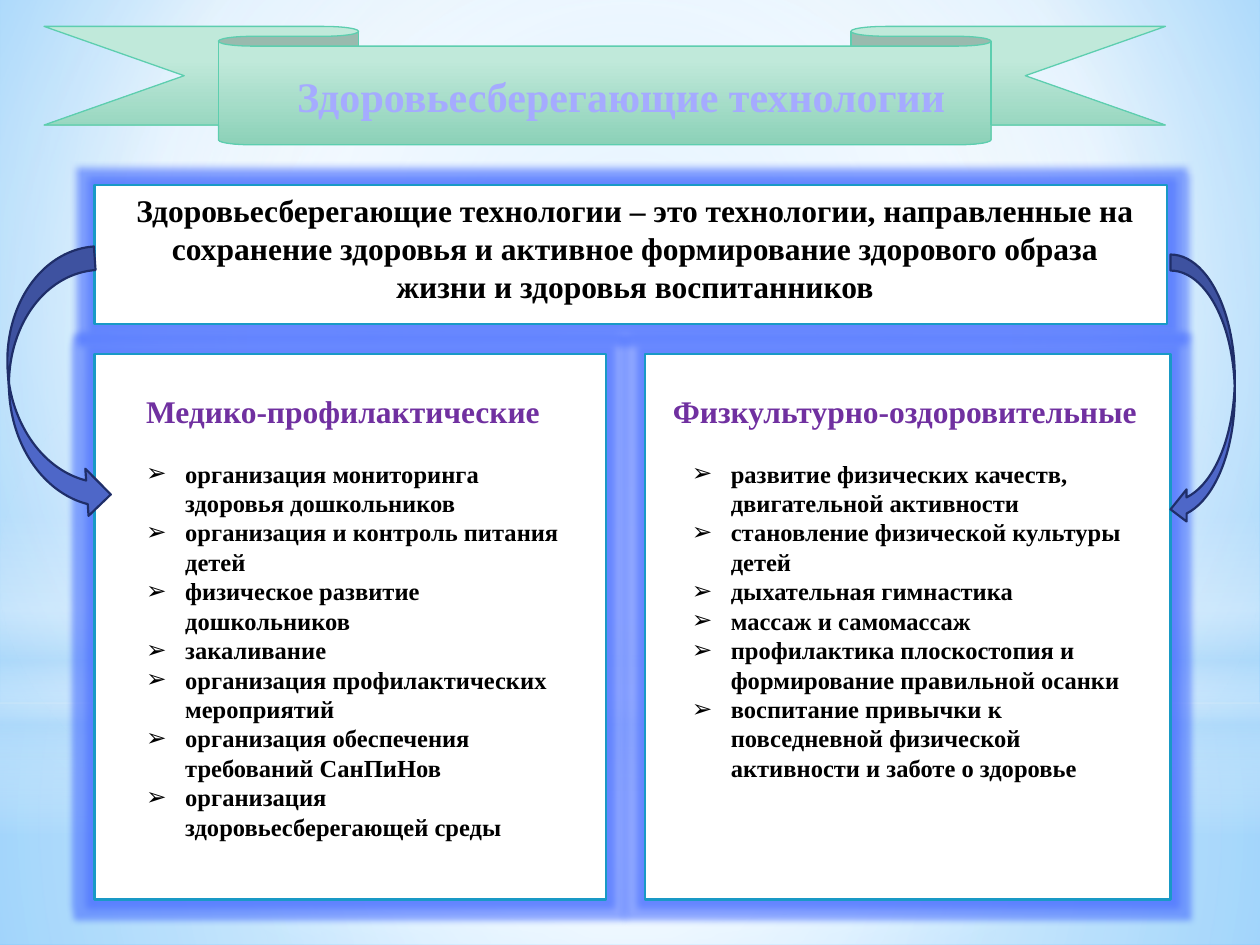
"""Build a slide on health-preserving technologies in preschool education."""
from dataclasses import dataclass
from typing import Optional

from lxml.etree import SubElement
from pptx import Presentation
from pptx.dml.color import RGBColor
from pptx.enum.shapes import MSO_SHAPE
from pptx.enum.text import MSO_ANCHOR, MSO_AUTO_SIZE, PP_ALIGN
from pptx.oxml.ns import qn
from pptx.util import Inches, Pt

FONT = "Times New Roman"
WHITE, PALE, BLACK, PURPLE = "FFFFFF", "B4DCFA", "000000", "7030A0"
CENTRE = (50, 50, 50, 50)


@dataclass(frozen=True)
class Gradient:
    stops: tuple
    focus: Optional[tuple] = None


@dataclass(frozen=True)
class Figure:
    kind: MSO_SHAPE
    area: tuple
    fill: object
    line: Optional[str] = None
    width: float = 1.25
    rotation: float = 0
    adjustments: tuple = ()
    glow: bool = False


@dataclass(frozen=True)
class Column:
    heading: str
    heading_area: tuple
    items: tuple
    items_area: tuple


BACKDROP = Gradient(((0, "9ED5FF", 100), (60, WHITE, 100), (100, "5BB9FF", 100)), (20, 10, 20, 60))
FLOOR = Gradient(((0, WHITE, 91), (37, WHITE, 76), (100, PALE, 79)), CENTRE)
SKY = Gradient(((0, WHITE, 89), (48, WHITE, 62), (100, PALE, 79)), CENTRE)
HORIZON = Gradient(((0, WHITE, 1), (29, WHITE, 30), (45, PALE, 40),
                    (55, WHITE, 26), (65, PALE, 60), (100, WHITE, 1)))
HALO = Gradient(((0, WHITE, 100), (56, WHITE, 1)), CENTRE)
MINT = Gradient(((28, "C0E9DA", 100), (100, "8CD1B8", 100)))

SCENERY = [
    Figure(MSO_SHAPE.RECTANGLE, (0, 5.58, 10, 1.92), FLOOR),
    Figure(MSO_SHAPE.RECTANGLE, (0, 0, 10, 5.58), SKY),
    Figure(MSO_SHAPE.RECTANGLE, (0, 4.12, 10, 2.5), HORIZON),
    Figure(MSO_SHAPE.OVAL, (0, 1.75, 10, 5.58), HALO),
]
RIBBON = Figure(MSO_SHAPE.DOWN_RIBBON, (0.35, 0.21, 8.9, 0.94), MINT, "5DCEAF", 0.75,
                adjustments=(0.167, 0.689))
PANELS = [
    Figure(MSO_SHAPE.RECTANGLE, area, WHITE, "1999C6", glow=True)
    for area in ((0.75, 1.47, 8.51, 1.1), (0.75, 2.81, 4.06, 4.33), (5.12, 2.81, 4.17, 4.33))
]
ARROWS = [
    Figure(MSO_SHAPE.CURVED_RIGHT_ARROW, (0.07, 1.98, 0.75, 2.16), "4E67C8", "1F2E69", rotation=356.1),
    Figure(MSO_SHAPE.CURVED_LEFT_ARROW, (9.29, 2.02, 0.51, 2.15), "4E67C8", "1F2E69"),
]

TITLE = "Здоровьесберегающие технологии"
DEFINITION = ("Здоровьесберегающие технологии – это технологии, направленные на сохранение здоровья "
              "и активное формирование здорового образа жизни и здоровья воспитанников")
COLUMNS = [
    Column("Медико-профилактические", (1.06, 3.06, 3.39, 0.4), (
        "организация мониторинга здоровья дошкольников",
        "организация и контроль питания детей",
        "физическое развитие дошкольников",
        "закаливание",
        "организация профилактических мероприятий",
        "организация обеспечения требований СанПиНов",
        "организация здоровьесберегающей среды",
    ), (1.06, 3.59, 3.54, 3.16)),
    Column("Физкультурно-оздоровительные", (5.24, 3.06, 4.02, 0.4), (
        "развитие физических качеств, двигательной активности",
        "становление физической культуры детей",
        "дыхательная гимнастика",
        "массаж и самомассаж",
        "профилактика плоскостопия и формирование правильной осанки",
        "воспитание привычки к повседневной физической активности и заботе о здоровье",
    ), (5.39, 3.59, 3.78, 2.69)),
]


def colour(code: str) -> RGBColor:
    """Turn a hex string into a colour."""
    return RGBColor.from_string(code)


def add_colour(parent, code: str, alpha: int) -> None:
    """Add a colour with opacity in percent to an XML parent."""
    tint = SubElement(parent, qn("a:srgbClr"), val=code)
    SubElement(tint, qn("a:alpha"), val=str(alpha * 1000))


def apply_gradient(properties, gradient: Gradient) -> None:
    """Replace the solid fill of a property element by a gradient."""
    solid = properties.find(qn("a:solidFill"))
    blend = SubElement(properties, qn("a:gradFill"), rotWithShape="1")
    properties.replace(solid, blend)
    stops = SubElement(blend, qn("a:gsLst"))
    for position, code, alpha in gradient.stops:
        add_colour(SubElement(stops, qn("a:gs"), pos=str(position * 1000)), code, alpha)
    if gradient.focus:
        course = SubElement(blend, qn("a:path"), path="circle")
        edges = {side: str(value * 1000) for side, value in zip("ltrb", gradient.focus)}
        SubElement(course, qn("a:fillToRect"), **edges)
    else:
        SubElement(blend, qn("a:lin"), ang="5400000", scaled="0")


def draw_figure(page, figure: Figure):
    """Draw one preset shape and return it."""
    shape = page.shapes.add_shape(figure.kind, *map(Inches, figure.area))
    shape.shadow.inherit = False
    shape.rotation = figure.rotation
    for index, value in enumerate(figure.adjustments):
        shape.adjustments[index] = value
    shape.fill.solid()
    properties = shape.element.spPr
    if isinstance(figure.fill, Gradient):
        apply_gradient(properties, figure.fill)
    else:
        shape.fill.fore_color.rgb = colour(figure.fill)
    if figure.line:
        shape.line.color.rgb = colour(figure.line)
        shape.line.width = Pt(figure.width)
    else:
        shape.line.fill.background()
    if figure.glow:
        effects = properties.find(qn("a:effectLst"))
        add_colour(SubElement(effects, qn("a:glow"), rad=str(Inches(0.11))), "4A70FF", 60)
    return shape


def write_text(box, area: tuple, lines: tuple, size: float, code: str, align=PP_ALIGN.LEFT,
               anchor=MSO_ANCHOR.TOP, bullet: str = "") -> None:
    """Place a text shape and fill it with one paragraph per line."""
    box.left, box.top, box.width, box.height = map(Inches, area)
    frame = box.text_frame
    frame.word_wrap = True
    frame.auto_size = MSO_AUTO_SIZE.NONE
    frame.vertical_anchor = anchor
    for index, line in enumerate(lines):
        para = frame.add_paragraph() if index else frame.paragraphs[0]
        para.alignment = align
        para.space_before = Pt(0)
        span = para.add_run()
        span.text = line
        span.font.name, span.font.size, span.font.bold = FONT, Pt(size), True
        span.font.color.rgb = colour(code)
        if bullet:
            settings = para._p.get_or_add_pPr()
            settings.set("marL", str(Inches(0.31)))
            settings.set("indent", str(-Inches(0.31)))
            SubElement(settings, qn("a:buFont"), typeface="Arial")
            SubElement(settings, qn("a:buChar"), char=bullet)


def main() -> None:
    """Build and save the deck."""
    deck = Presentation()
    deck.slide_width, deck.slide_height = Inches(10), Inches(7.5)
    page = deck.slides.add_slide(deck.slide_layouts[4])
    title, *bodies = page.placeholders

    page.background.fill.solid()
    apply_gradient(page.element.find(".//" + qn("p:bgPr")), BACKDROP)
    for index, figure in enumerate(SCENERY):
        layer = draw_figure(page, figure).element
        layer.nvSpPr.cNvPr.set("id", str(100 + index))
        deck.slide_master.shapes.element.insert(2 + index, layer)
    for figure in [RIBBON, *PANELS, *ARROWS]:
        draw_figure(page, figure)

    for placeholder in (title, *bodies):
        page.shapes.element.append(placeholder.element)
    write_text(title, (1.75, 0.39, 6.36, 0.74), (TITLE,), 24, "A5ABFF",
               PP_ALIGN.CENTER, MSO_ANCHOR.MIDDLE)
    definition = page.shapes.add_textbox(0, 0, 0, 0)
    write_text(definition, (0.9, 1.47, 8.28, 1.01), (DEFINITION,), 18, BLACK, PP_ALIGN.CENTER)
    for column, heading, items in zip(COLUMNS, bodies[::2], bodies[1::2]):
        write_text(heading, column.heading_area, (column.heading,), 18, PURPLE)
        write_text(items, column.items_area, column.items, 14, BLACK, bullet="➢")

    deck.save("out.pptx")


if __name__ == "__main__":
    main()
